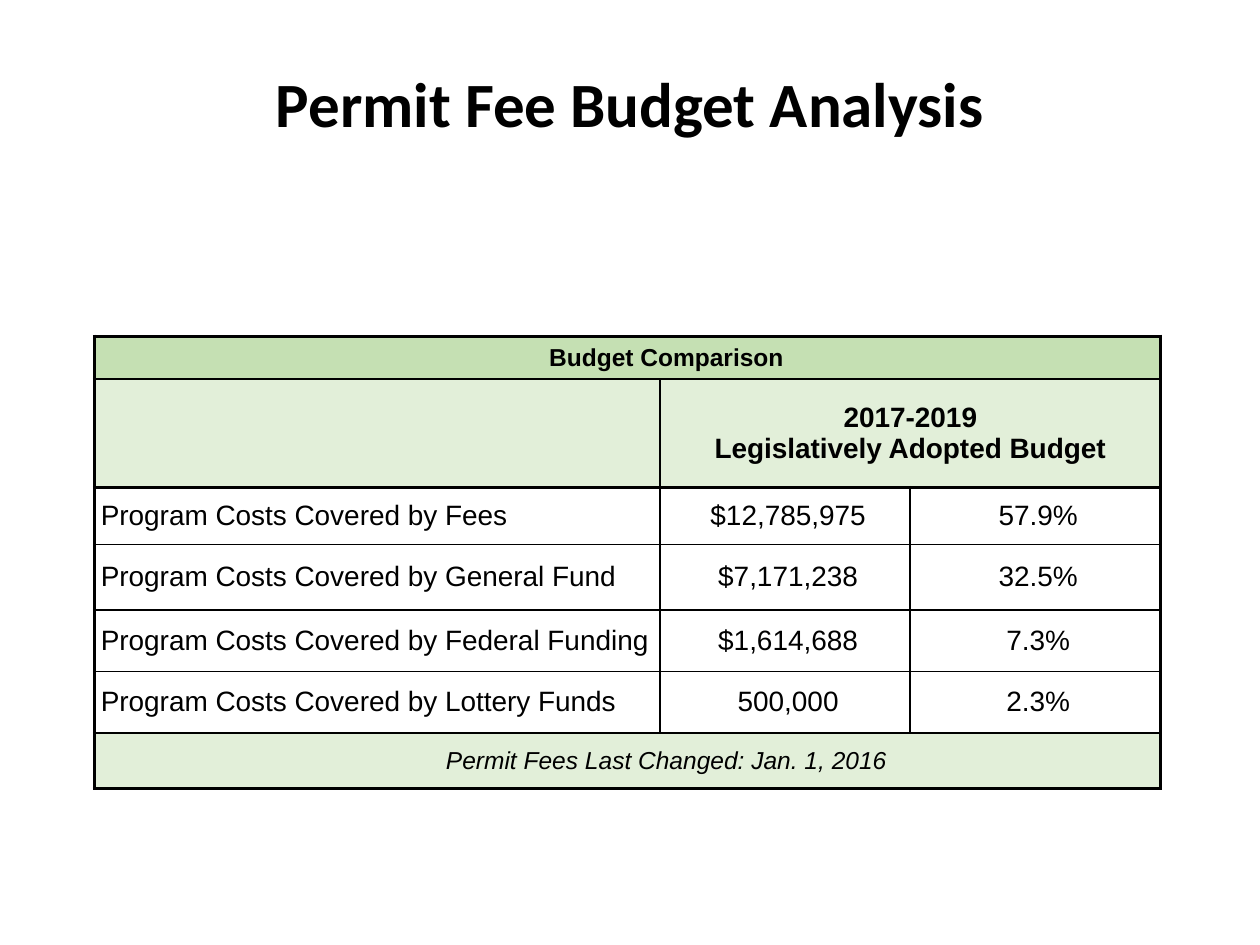
from lxml.etree import SubElement
from pptx import Presentation
from pptx.dml.color import RGBColor
from pptx.enum.text import MSO_ANCHOR, PP_ALIGN
from pptx.oxml.ns import qn
from pptx.util import Inches, Pt

BLACK = RGBColor(0x00, 0x00, 0x00)
GREEN = RGBColor(0xC5, 0xE0, 0xB3)
PALE_GREEN = RGBColor(0xE2, 0xEF, 0xD9)
THIN, MEDIUM, HEAVY = 1, 1.5, 2.25

COL_WIDTHS = [4.49, 1.98, 1.99]
ROW_HEIGHTS = [0.34, 0.86, 0.45, 0.52, 0.49, 0.49, 0.44]
LAST_ROW, LAST_COL = len(ROW_HEIGHTS) - 1, len(COL_WIDTHS) - 1
BANNER_ROWS = (0, LAST_ROW)
HEADER_ROW = 1
FILLS = {0: GREEN, HEADER_ROW: PALE_GREEN, LAST_ROW: PALE_GREEN}

FUNDING = [
    ("Program Costs Covered by Fees", "$12,785,975", "57.9%"),
    ("Program Costs Covered by General Fund", "$7,171,238", "32.5%"),
    ("Program Costs Covered by Federal Funding", "$1,614,688", "7.3%"),
    ("Program Costs Covered by Lottery Funds", "500,000", "2.3%"),
]


def format_runs(p, size, font="Arial", bold=False, italic=False):
    for r in p.runs:
        r.font.name = font
        r.font.size = Pt(size)
        r.font.bold = bold
        r.font.italic = italic
        r.font.color.rgb = BLACK


def add_title(slide, text):
    title = slide.shapes.title
    title.left, title.top = Inches(0), Inches(0.46)
    title.width, title.height = Inches(10), Inches(0.71)
    tf = title.text_frame
    tf.text = text
    tf.vertical_anchor = MSO_ANCHOR.TOP
    p = tf.paragraphs[0]
    p.alignment = PP_ALIGN.CENTER
    format_runs(p, 36, "Calibri", bold=True)


def set_text(cell, text, size=16, indent=0.05, align=PP_ALIGN.CENTER, **style):
    cell.text_frame.text = text
    for p in cell.text_frame.paragraphs:
        p.alignment = align
        p._p.get_or_add_pPr().set("marL", str(Inches(indent)))
        format_runs(p, size, **style)


def add_border(cell, side, width):
    """Draw one cell edge; side is L, R, T or B."""
    ln = SubElement(cell._tc.get_or_add_tcPr(), qn(f"a:ln{side}"), w=str(Pt(width)))
    fill = SubElement(ln, qn("a:solidFill"))
    SubElement(fill, qn("a:srgbClr"), val=str(BLACK))


def style_cell(cell, row, col):
    cell.margin_left = cell.margin_right = 0
    cell.margin_top = cell.margin_bottom = 0
    cell.vertical_anchor = MSO_ANCHOR.MIDDLE
    banner = row in BANNER_ROWS
    if not cell.is_spanned:
        add_border(cell, "L", HEAVY if col == 0 else MEDIUM)
    if not cell.is_spanned or col == LAST_COL:
        add_border(cell, "R", HEAVY if banner else MEDIUM)
    add_border(cell, "T", HEAVY if row in (0, HEADER_ROW + 1) else THIN)
    add_border(cell, "B", HEAVY if row in (HEADER_ROW, LAST_ROW) else THIN)
    if row in FILLS:
        cell.fill.solid()
        cell.fill.fore_color.rgb = FILLS[row]
    else:
        cell.fill.background()


def add_budget_table(slide):
    frame = slide.shapes.add_table(
        len(ROW_HEIGHTS), len(COL_WIDTHS), Inches(0.75), Inches(2.67),
        Inches(sum(COL_WIDTHS)), Inches(sum(ROW_HEIGHTS)))
    table = frame.table
    table.first_row = table.horz_banding = False
    for column, width in zip(table.columns, COL_WIDTHS):
        column.width = Inches(width)
    for row, height in zip(table.rows, ROW_HEIGHTS):
        row.height = Inches(height)

    for row in BANNER_ROWS:
        table.cell(row, 0).merge(table.cell(row, LAST_COL))
    table.cell(HEADER_ROW, 1).merge(table.cell(HEADER_ROW, LAST_COL))
    for row in range(len(ROW_HEIGHTS)):
        for col in range(len(COL_WIDTHS)):
            style_cell(table.cell(row, col), row, col)

    set_text(table.cell(0, 0), "Budget Comparison", 14, 0.62, bold=True)
    set_text(table.cell(HEADER_ROW, 1), "2017-2019\nLegislatively Adopted Budget",
             indent=0, bold=True)
    for row, values in enumerate(FUNDING, start=HEADER_ROW + 1):
        for col, value in enumerate(values):
            align = PP_ALIGN.CENTER if col else PP_ALIGN.LEFT
            set_text(table.cell(row, col), value, align=align)
    set_text(table.cell(LAST_ROW, 0), "Permit Fees Last Changed: Jan. 1, 2016",
             14, 0.62, italic=True)


def main():
    prs = Presentation()
    prs.slide_width, prs.slide_height = Inches(10), Inches(7.5)
    slide = prs.slides.add_slide(prs.slide_layouts[5])
    add_budget_table(slide)
    add_title(slide, "Permit Fee Budget Analysis")
    prs.save("out.pptx")


if __name__ == "__main__":
    main()
